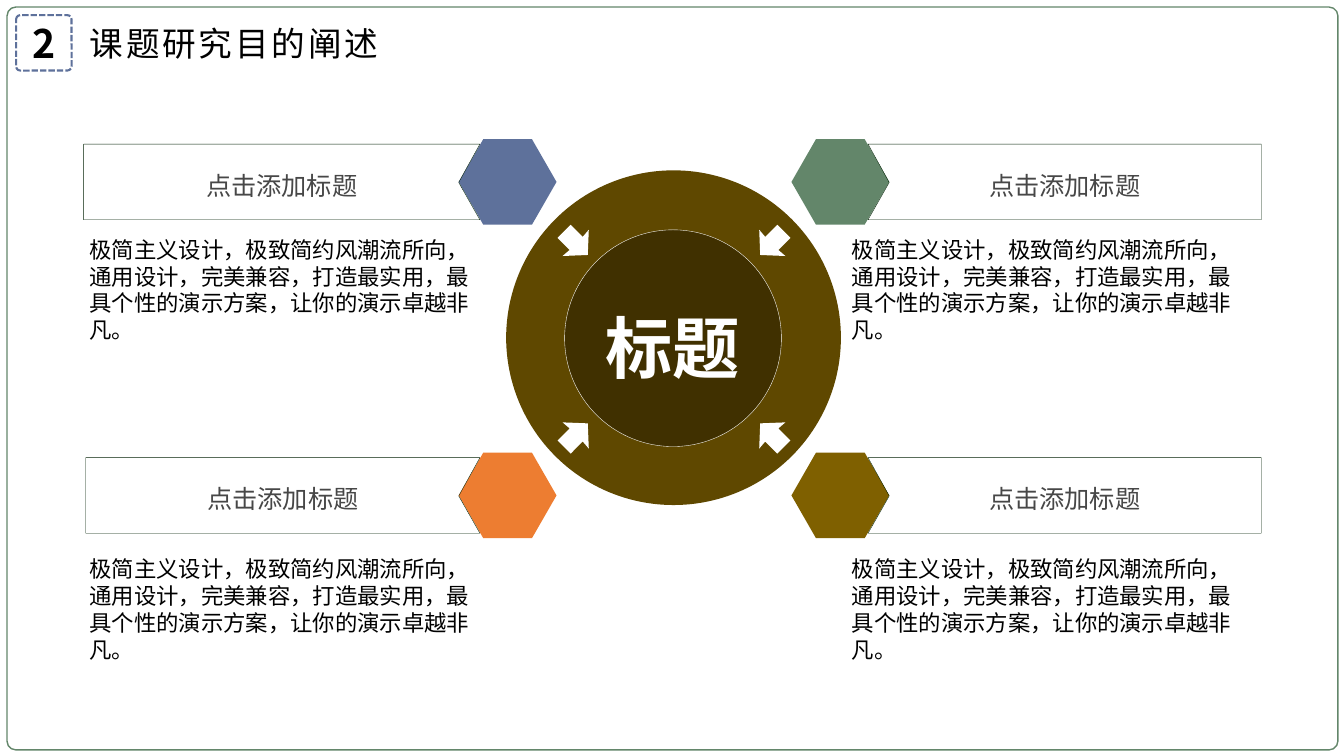
"""Builds the research-purpose slide: a hub with four captioned topics."""
from dataclasses import dataclass

from lxml import etree
from pptx import Presentation
from pptx.dml.color import RGBColor
from pptx.enum import dml, shapes, text
from pptx.oxml import ns
from pptx.util import Pt

PX = 9144
HEADING = "课题研究目的阐述"
CAPTION = "点击添加标题"
BODY = "极简主义设计，极致简约风潮流所向，通用设计，完美兼容，打造最实用，最具个性的演示方案，让你的演示卓越非凡。"
ARROW = [(566, 223), (553, 236), (565, 248), (558, 254), (583, 253), (584, 228), (578, 235)]
MIRROR_X, MIRROR_Y = 1337, 673


@dataclass(frozen=True)
class Theme:
    """Colours, font and type sizes of the slide."""
    font: str = "Noto Sans CJK SC"
    black: str = "000000"
    white: str = "FFFFFF"
    grey: str = "474747"
    outline: str = "002003"
    green: str = "63866A"
    blue: str = "5E719B"
    orange: str = "ED7D31"
    olive: str = "7F6000"
    ring: str = "5F4800"
    core: str = "403000"
    body: int = 16
    caption: int = 18
    heading: int = 24
    number: int = 28
    hub: int = 48


THEME = Theme()


def paint(shape, fill=None, line=None, width=1):
    """Set a shape's fill and line, with no shadow."""
    shape.shadow.inherit = False
    if fill:
        shape.fill.solid()
        shape.fill.fore_color.rgb = RGBColor.from_string(fill)
    else:
        shape.fill.background()
    if line:
        shape.line.color.rgb = RGBColor.from_string(line)
        shape.line.width = Pt(width)
    else:
        shape.line.fill.background()
    return shape


def add_preset(page, kind, area, adjust=None, **style):
    """Add a painted preset shape."""
    shape = page.shapes.add_shape(kind, *(n * PX for n in area))
    if adjust is not None:
        shape.adjustments[0] = adjust
    return paint(shape, **style)


def add_outline(page, points, **style):
    """Add a painted closed polygon."""
    builder = page.shapes.build_freeform(*points[0], scale=PX)
    builder.add_line_segments(points[1:], close=True)
    return paint(builder.convert_to_shape(), **style)


def write(shape, words, size, color, bold=False, spacing=None, inset=0, tracking=None):
    """Write centred text into a shape."""
    frame = shape.text_frame
    frame.text = words
    frame.word_wrap = True
    frame.vertical_anchor = text.MSO_ANCHOR.MIDDLE
    frame.margin_left = frame.margin_right = inset * PX
    frame.margin_top = frame.margin_bottom = inset * PX // 2
    para = frame.paragraphs[0]
    para.alignment = text.PP_ALIGN.CENTER
    para.line_spacing = spacing
    span = para.runs[0]
    span.font.name = THEME.font
    span.font.size = Pt(size)
    span.font.bold = bold
    span.font.color.rgb = RGBColor.from_string(color)
    props = span.font._element
    etree.SubElement(props, ns.qn("a:ea")).set("typeface", THEME.font)
    if tracking:
        props.set("spc", str(tracking * 100))


def add_body(page, left, top):
    """Add a left-aligned paragraph of body text."""
    box = page.shapes.add_textbox(left * PX, top * PX, 415 * PX, 128 * PX)
    write(box, BODY, THEME.body, THEME.black, inset=10)
    box.text_frame.vertical_anchor = text.MSO_ANCHOR.TOP
    box.text_frame.paragraphs[0].alignment = text.PP_ALIGN.LEFT


def add_topic(page, color, outer, inner, notch, hexagon_left, top, body_left, body_top):
    """Add a hexagon, its notched caption bar and its body text."""
    add_preset(page, shapes.MSO_SHAPE.HEXAGON, (hexagon_left, top, 97, 85), 0.287, fill=color)
    upper, lower = top + 5, top + 80
    points = [(outer, upper), (inner, upper), (notch, top + 43), (inner, lower), (outer, lower)]
    bar = add_outline(page, points, line=THEME.outline, width=0.25)
    write(bar, CAPTION, THEME.caption, THEME.grey, spacing=1.2)
    add_body(page, body_left, body_top)


def add_hub(page):
    """Add the ring with four inward arrows and the titled core."""
    add_preset(page, shapes.MSO_SHAPE.OVAL, (502, 169, 332, 332), fill=THEME.ring)
    for flip_x in (False, True):
        for flip_y in (False, True):
            points = [(MIRROR_X - x if flip_x else x, MIRROR_Y - y if flip_y else y)
                      for x, y in ARROW]
            add_outline(page, points, fill=THEME.white)
    core = add_preset(page, shapes.MSO_SHAPE.OVAL, (560, 228, 215, 215),
                      fill=THEME.core, line=THEME.white, width=0.25)
    write(core, "标题", THEME.hub, THEME.white, bold=True, spacing=1.2)


def add_header(page):
    """Add the page frame, section number and title."""
    rounded = shapes.MSO_SHAPE.ROUNDED_RECTANGLE
    add_preset(page, rounded, (7, 7, 1320, 737), 0.012, line=THEME.green)
    badge = add_preset(page, rounded, (16, 15, 55, 55), 0.076, line=THEME.blue, width=1.5)
    badge.line.dash_style = dml.MSO_LINE.SQUARE_DOT
    write(badge, "2", THEME.number, THEME.black, bold=True)
    title = page.shapes.title
    title.left, title.top, title.width, title.height = (n * PX for n in (72, 15, 320, 55))
    write(title, HEADING, THEME.heading, THEME.black, inset=10, tracking=2)


def main():
    """Build and save the deck."""
    deck = Presentation()
    deck.slide_width, deck.slide_height = 1333 * PX, 750 * PX
    page = deck.slides.add_slide(deck.slide_layouts[5])
    add_header(page)
    add_hub(page)
    rows = [(138, 229, 83, THEME.blue, THEME.green),
            (449, 546, 85, THEME.orange, THEME.olive)]
    for top, body_top, outer, left_color, right_color in rows:
        add_topic(page, left_color, outer, 476, 455, 455, top, 79, body_top)
        add_topic(page, right_color, 1251, 861, 882, 785, top, 835, body_top)
    deck.save("out.pptx")


if __name__ == "__main__":
    main()
